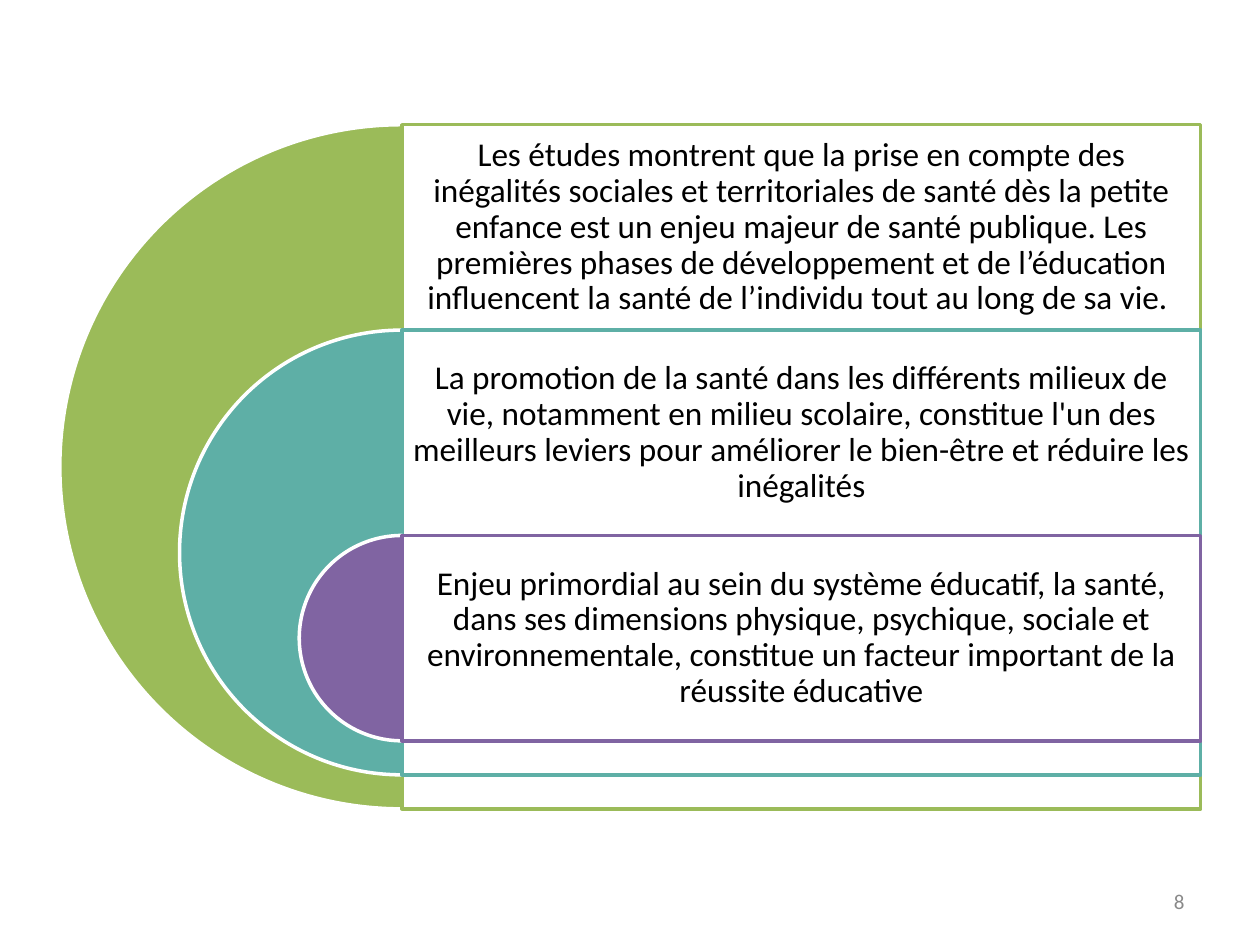
"""Build a slide of three nested half-discs, each with its framed statement."""
from dataclasses import dataclass

from lxml.etree import SubElement
from pptx import Presentation
from pptx.dml.color import RGBColor
from pptx.enum.shapes import MSO_SHAPE as Shape
from pptx.enum.text import MSO_ANCHOR as Anchor, PP_ALIGN as Align
from pptx.oxml.ns import qn
from pptx.shapes.autoshape import Shape as AutoShape
from pptx.slide import Slide
from pptx.util import Inches, Pt

COLORS = {
    "white": "FFFFFF",
    "black": "000000",
    "gray": "898989",
    "green": "9BBB59",
    "teal": "5EAFA6",
    "purple": "8064A2",
}
FONT = "Calibri"
CENTER_X = 3.19
FIRST_TOP = 0.99
BAND_HEIGHT = 1.63
FRAME_WIDTH = 6.34
OUTER_DIAMETER = 5.43
DIAMETER_STEP = 1.9


@dataclass
class Level:
    color: str
    statement: str


@dataclass
class Box:
    left: float
    top: float
    width: float
    height: float

    def lengths(self) -> list[Inches]:
        return [Inches(value) for value in (self.left, self.top, self.width, self.height)]


LEVELS = [
    Level("green", "Les études montrent que la prise en compte des inégalités sociales et "
                   "territoriales de santé dès la petite enfance est un enjeu majeur de santé "
                   "publique. Les premières phases de développement et de l’éducation "
                   "influencent la santé de l’individu tout au long de sa vie. "),
    Level("teal", "La promotion de la santé dans les différents milieux de vie, notamment en "
                  "milieu scolaire, constitue l'un des meilleurs leviers pour améliorer le "
                  "bien-être et réduire les inégalités"),
    Level("purple", "Enjeu primordial au sein du système éducatif, la santé, dans ses dimensions "
                    "physique, psychique, sociale et environnementale, constitue un facteur "
                    "important de la réussite éducative"),
]


def rgb(name: str) -> RGBColor:
    return RGBColor.from_string(COLORS[name])


def add_outlined(slide: Slide, kind: Shape, box: Box, fill: str, line: str) -> AutoShape:
    shape = slide.shapes.add_shape(kind, *box.lengths())
    shape.shadow.inherit = False
    shape.fill.solid()
    shape.fill.fore_color.rgb = rgb(fill)
    shape.line.color.rgb = rgb(line)
    shape.line.width = Pt(2)
    return shape


def add_half_disc(slide: Slide, top: float, diameter: float, color: str) -> None:
    box = Box(CENTER_X - diameter / 2, top, diameter, diameter)
    half_disc = add_outlined(slide, Shape.PIE, box, color, "white")
    half_disc.adjustments[0] = 54
    half_disc.adjustments[1] = 162


def add_frame(slide: Slide, top: float, height: float, color: str) -> None:
    box = Box(CENTER_X, top, FRAME_WIDTH, height)
    frame = add_outlined(slide, Shape.RECTANGLE, box, "white", color)
    fill_color = frame.fill._xPr.find(qn("a:solidFill")).find(qn("a:srgbClr"))
    SubElement(fill_color, qn("a:alpha"), val="90000")


def add_text(slide: Slide, box: Box, text: str, size: int, color: str, align: Align,
             inset: float, line_spacing: float = 1.0) -> None:
    frame = slide.shapes.add_textbox(*box.lengths()).text_frame
    frame.word_wrap = True
    frame.vertical_anchor = Anchor.MIDDLE
    frame.margin_left = frame.margin_right = Inches(inset)
    frame.margin_top = frame.margin_bottom = Inches(0.08)
    paragraph = frame.paragraphs[0]
    paragraph.alignment = align
    paragraph.line_spacing = line_spacing
    run = paragraph.add_run()
    run.text = text
    run.font.name = FONT
    run.font.size = Pt(size)
    run.font.color.rgb = rgb(color)


def add_level(slide: Slide, index: int, level: Level) -> None:
    top = FIRST_TOP + index * BAND_HEIGHT
    diameter = OUTER_DIAMETER - index * DIAMETER_STEP
    add_half_disc(slide, top, diameter, level.color)
    add_frame(slide, top, diameter, level.color)
    add_text(slide, Box(CENTER_X, top, FRAME_WIDTH, BAND_HEIGHT), level.statement,
             19, "black", Align.CENTER, 0.08, 0.9)


def main() -> None:
    presentation = Presentation()
    presentation.slide_width = Inches(10)
    presentation.slide_height = Inches(7.5)
    slide = presentation.slides.add_slide(presentation.slide_layouts[6])
    add_text(slide, Box(7.17, 6.95, 2.33, 0.4), "8", 12, "gray", Align.RIGHT, 0.1)
    for index, level in enumerate(LEVELS):
        add_level(slide, index, level)
    presentation.save("out.pptx")


if __name__ == "__main__":
    main()
